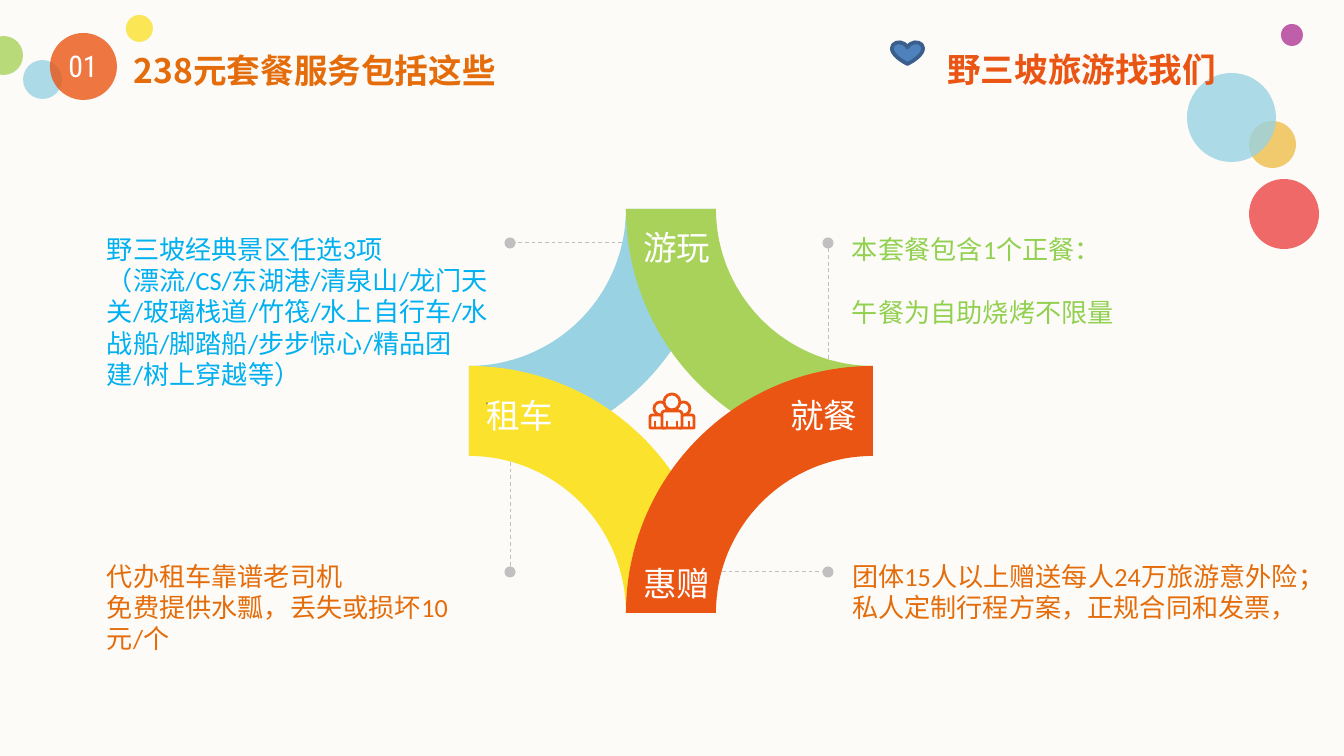
import math
import lxml.etree
import pptx
import pptx.dml.color
import pptx.enum.dml
import pptx.enum.shapes
import pptx.enum.text
import pptx.oxml.ns
import pptx.util

SHAPE = pptx.enum.shapes.MSO_SHAPE
ALIGN = pptx.enum.text.PP_ALIGN
EMU_PER_PX = 914400 / 134.4
BACKGROUND, ORANGE, BLUE, YELLOW, GREEN = "FCFBF7", "EA5514", "98D2E3", "FBE22D", "A9D25A"

RING_CENTERS = {"left": 469, "right": 873, "top": 209, "bottom": 613}
OUTER_RADIUS, INNER_RADIUS, ARC_STEPS = 247, 157, 45
PETALS = [
    ("left", "top", 0, BLUE),
    ("left", "bottom", 270, YELLOW),
    ("right", "top", 90, GREEN),
    ("right", "bottom", 180, ORANGE),
]

PEOPLE = [
    (SHAPE.ROUND_2_SAME_RECTANGLE, 650, 415, 15, 13),
    (SHAPE.ROUND_2_SAME_RECTANGLE, 679, 415, 15, 13),
    (SHAPE.OVAL, 654, 402, 13, 13),
    (SHAPE.OVAL, 677, 402, 13, 13),
    (SHAPE.ROUND_2_SAME_RECTANGLE, 662, 411, 20, 17),
    (SHAPE.OVAL, 664, 394, 16, 16),
]
ARMS = [(x, 421, x, 427) for x in (655, 667, 677, 689)]

LEADERS = [
    (622, 243, 510, 243),
    (510, 462, 510, 572),
    (722, 572, 828, 572),
    (828, 359, 828, 243),
]

BUBBLES = [
    (126, 15, 27, YELLOW, 80),
    (-16, 36, 39, GREEN, 80),
    (23, 60, 39, BLUE, 80),
    (50, 33, 67, ORANGE, 80),
    (1281, 24, 22, "B03896", 80),
    (1249, 121, 47, "F0CA6C", 100),
    (1249, 179, 70, "EB4544", 80),
    (1187, 73, 89, BLUE, 80),
]

BODY = {"size": 14, "name": "Calibri"}
LABEL = {"size": 18, "name": "Calibri", "color": "FFFFFF"}
LUNCH = BODY | {"color": "92D050"}
PLAY = BODY | {"color": "00B0F0"}
SERVICE = BODY | {"color": "E46C0A"}
NUMBER = {"size": 16, "name": "Roboto Condensed", "color": "FFFFFF"}
TITLE = {"size": 18, "name": "Noto Sans CJK JP", "color": "E46C0A", "bold": True}
SLOGAN = {"size": 18, "name": "Calibri", "color": ORANGE, "bold": True}
DOT = {"size": 8, "name": "Calibri", "color": "7F7F7F"}

BLOCKS = [
    ((852, 233, 452, 95), [
        ("本套餐包含1个正餐：", LUNCH, {}),
        ("午餐为自助烧烤不限量", LUNCH, {"space_before": pptx.util.Pt(17)}),
    ]),
    ((852, 560, 468, 63), [
        ("团体15人以上赠送每人24万旅游意外险；", SERVICE, {}),
        ("私人定制行程方案，正规合同和发票，", SERVICE, {}),
    ]),
    ((107, 233, 382, 176), [
        ("野三坡经典景区任选3项", PLAY, {}),
        ("（漂流/CS/东湖港/清泉山/龙门天关/玻璃栈道/竹筏/水上自行车/水战船/脚踏船/步步惊心/精品团建/树上穿越等）", PLAY, {}),
        (".", DOT, {"alignment": ALIGN.RIGHT}),
    ]),
    ((107, 560, 403, 63), [
        ("代办租车靠谱老司机", SERVICE, {}),
        ("免费提供水瓢，丢失或损坏10元/个", SERVICE, {}),
    ]),
    ((59, 48, 48, 36), [("01", NUMBER, {"alignment": ALIGN.CENTER})]),
    ((134, 50, 409, 40), [("238元套餐服务包括这些", TITLE, {})]),
]

LABELS = [
    ((630, 220, 95, 54), "游玩", LABEL),
    ((777, 388, 95, 54), "就餐", LABEL),
    ((473, 388, 95, 54), "租车", LABEL),
    ((630, 556, 95, 54), "惠赠", LABEL),
    ((934, 42, 306, 54), "野三坡旅游找我们", SLOGAN),
]


def px(*lengths):
    return [round(length * EMU_PER_PX) for length in lengths]


def rgb(color):
    return pptx.dml.color.RGBColor.from_string(color)


def paint(shape, color, opacity=100, outline=None, width=1):
    shape.shadow.inherit = False
    shape.fill.solid()
    shape.fill.fore_color.rgb = rgb(color)
    if opacity < 100:
        tint = shape.fill._xPr.find(".//" + pptx.oxml.ns.qn("a:srgbClr"))
        alpha = lxml.etree.SubElement(tint, pptx.oxml.ns.qn("a:alpha"))
        alpha.set("val", str(opacity * 1000))
    if outline:
        shape.line.color.rgb = rgb(outline)
        shape.line.width = pptx.util.Pt(width)
    else:
        shape.line.fill.background()


def add_line(ends, color, width, dotted=False):
    line = shapes.add_connector(pptx.enum.shapes.MSO_CONNECTOR.STRAIGHT, *px(*ends))
    line.line.color.rgb = rgb(color)
    line.line.width = pptx.util.Pt(width)
    if dotted:
        line.line.dash_style = pptx.enum.dml.MSO_LINE.DASH
        tail = lxml.etree.SubElement(line.line._get_or_add_ln(), pptx.oxml.ns.qn("a:tailEnd"))
        tail.set("type", "oval")
    lxml.etree.SubElement(line._element.spPr, pptx.oxml.ns.qn("a:effectLst"))


def add_text(box, paragraphs, **frame_format):
    frame = shapes.add_textbox(*px(*box)).text_frame
    for key, value in frame_format.items():
        setattr(frame, key, value)
    for index, (words, style, layout) in enumerate(paragraphs):
        paragraph = frame.add_paragraph() if index else frame.paragraphs[0]
        for key, value in layout.items():
            setattr(paragraph, key, value)
        run = paragraph.add_run()
        run.text = words
        for key, value in style.items():
            if key == "color":
                run.font.color.rgb = rgb(value)
            else:
                setattr(run.font, key, pptx.util.Pt(value) if key == "size" else value)


def arc(center_x, center_y, radius, start):
    angles = [math.radians(start + 90 * step / ARC_STEPS) for step in range(ARC_STEPS + 1)]
    return [px(center_x + radius * math.cos(a), center_y + radius * math.sin(a)) for a in angles]


deck = pptx.Presentation()
deck.slide_width, deck.slide_height = px(1344, 756)
slide = deck.slides.add_slide(deck.slide_layouts[6])
slide.background.fill.solid()
slide.background.fill.fore_color.rgb = rgb(BACKGROUND)
shapes = slide.shapes

for side, level, start, color in PETALS:
    center = RING_CENTERS[side], RING_CENTERS[level]
    outline = arc(*center, OUTER_RADIUS, start) + arc(*center, INNER_RADIUS, start)[::-1]
    builder = shapes.build_freeform(*outline[0])
    builder.add_line_segments(outline[1:], close=True)
    paint(builder.convert_to_shape(), color)

for kind, *box in PEOPLE:
    paint(shapes.add_shape(kind, *px(*box)), BACKGROUND, outline=ORANGE, width=1.5)
for ends in ARMS:
    add_line(ends, ORANGE, 1.25)
for ends in LEADERS:
    add_line(ends, "C0C0C0", 0.5, dotted=True)
for left, top, size, color, opacity in BUBBLES:
    paint(shapes.add_shape(SHAPE.OVAL, *px(left, top, size, size)), color, opacity)
paint(shapes.add_shape(SHAPE.HEART, *px(892, 42, 31, 22)), "4F81BD", outline="3A5F8C", width=2)

for box, paragraphs in BLOCKS:
    add_text(box, paragraphs, word_wrap=True, margin_left=0, margin_top=0, margin_right=0,
             margin_bottom=0, auto_size=pptx.enum.text.MSO_AUTO_SIZE.SHAPE_TO_FIT_TEXT)
for box, words, style in LABELS:
    add_text(box, [(words, style, {})], word_wrap=False,
             auto_size=pptx.enum.text.MSO_AUTO_SIZE.SHAPE_TO_FIT_TEXT)

deck.save("out.pptx")
